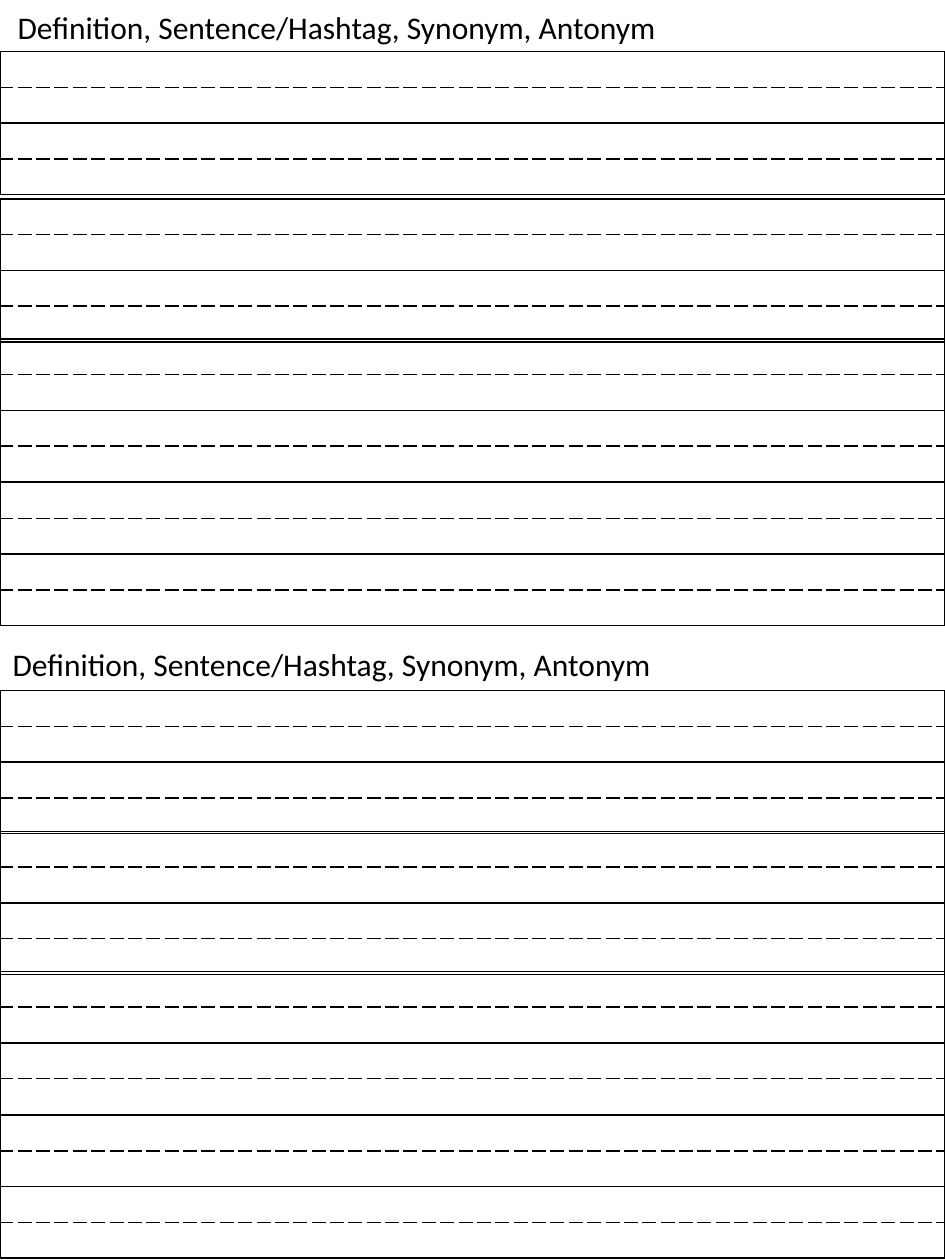
from lxml import etree
from pptx import Presentation
from pptx.dml.color import RGBColor
from pptx.enum.text import MSO_ANCHOR, MSO_AUTO_SIZE, PP_ALIGN
from pptx.oxml.ns import qn
from pptx.util import Cm, Pt

TOP = MSO_ANCHOR.TOP
GROW = MSO_AUTO_SIZE.SHAPE_TO_FIT_TEXT
LEFT = PP_ALIGN.LEFT

COLORS = {"ink": "000000"}
WIDTH, HEIGHT = 19.05, 25.4
ROWS, ROW = 4, 0.72
HEAD = "Definition, Sentence/Hashtag, Synonym, Antonym"
HEADS = [(0.1, 0.03), (0, 12.88)]
TOPS = [1.04, 4.01, 6.83, 9.73, 13.92, 16.76, 19.58, 22.48]

FRAME = {"word_wrap": True, "auto_size": GROW, "vertical_anchor": TOP}
PARA = {"alignment": LEFT, "space_before": Pt(0)}
FONT = {"name": "Calibri", "size": Pt(18), "bold": False}


def apply(item, values):
    for key, value in values.items():
        setattr(item, key, value)


def add_head(shape, left, top):
    apply(shape, {"left": Cm(left), "top": Cm(top),
                  "width": Cm(14.17), "height": Cm(1.02)})
    frame = shape.text_frame
    frame.text = HEAD
    apply(frame, FRAME)
    para = frame.paragraphs[0]
    apply(para, PARA)
    font = para.runs[0].font
    apply(font, FONT)
    font.color.rgb = RGBColor.from_string(COLORS["ink"])


def add_edge(cell, side, dash):
    props = cell._tc.get_or_add_tcPr()
    line = etree.SubElement(props, qn("a:ln" + side), w=str(Pt(1)))
    fill = etree.SubElement(line, qn("a:solidFill"))
    etree.SubElement(fill, qn("a:srgbClr"), val=COLORS["ink"])
    etree.SubElement(line, qn("a:prstDash"), val=dash)


def style_cell(cell, upper):
    dashes = {"L": "solid", "R": "solid",
              "T": "solid" if upper else "lgDash",
              "B": "lgDash" if upper else "solid"}
    for side, dash in dashes.items():
        add_edge(cell, side, dash)
    cell.fill.background()
    para = cell.text_frame.paragraphs[0]._p
    etree.SubElement(para, qn("a:endParaRPr"), sz="1100")


def add_lines(slide, top):
    frame = slide.shapes.add_table(ROWS, 1, Cm(0), Cm(top),
                                   Cm(WIDTH), Cm(ROW * ROWS))
    table = frame.table
    apply(table, {"first_row": False, "horz_banding": False})
    for index, row in enumerate(table.rows):
        row.height = Cm(ROW)
        style_cell(row.cells[0], index % 2 == 0)


def main():
    deck = Presentation()
    apply(deck, {"slide_width": Cm(WIDTH), "slide_height": Cm(HEIGHT)})
    slide = deck.slides.add_slide(deck.slide_layouts[0])
    for shape, place in zip(slide.placeholders, HEADS):
        add_head(shape, *place)
    for top in TOPS:
        add_lines(slide, top)
    deck.save("out.pptx")


if __name__ == "__main__":
    main()
